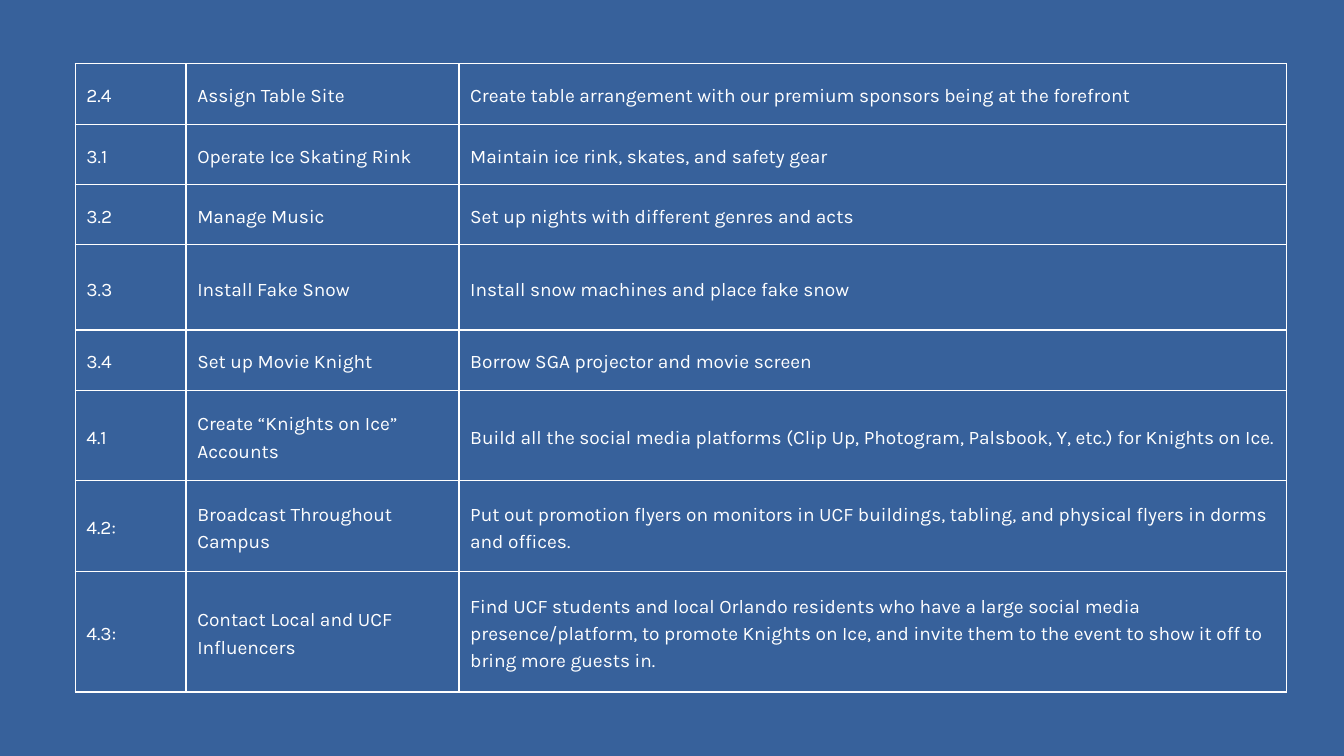
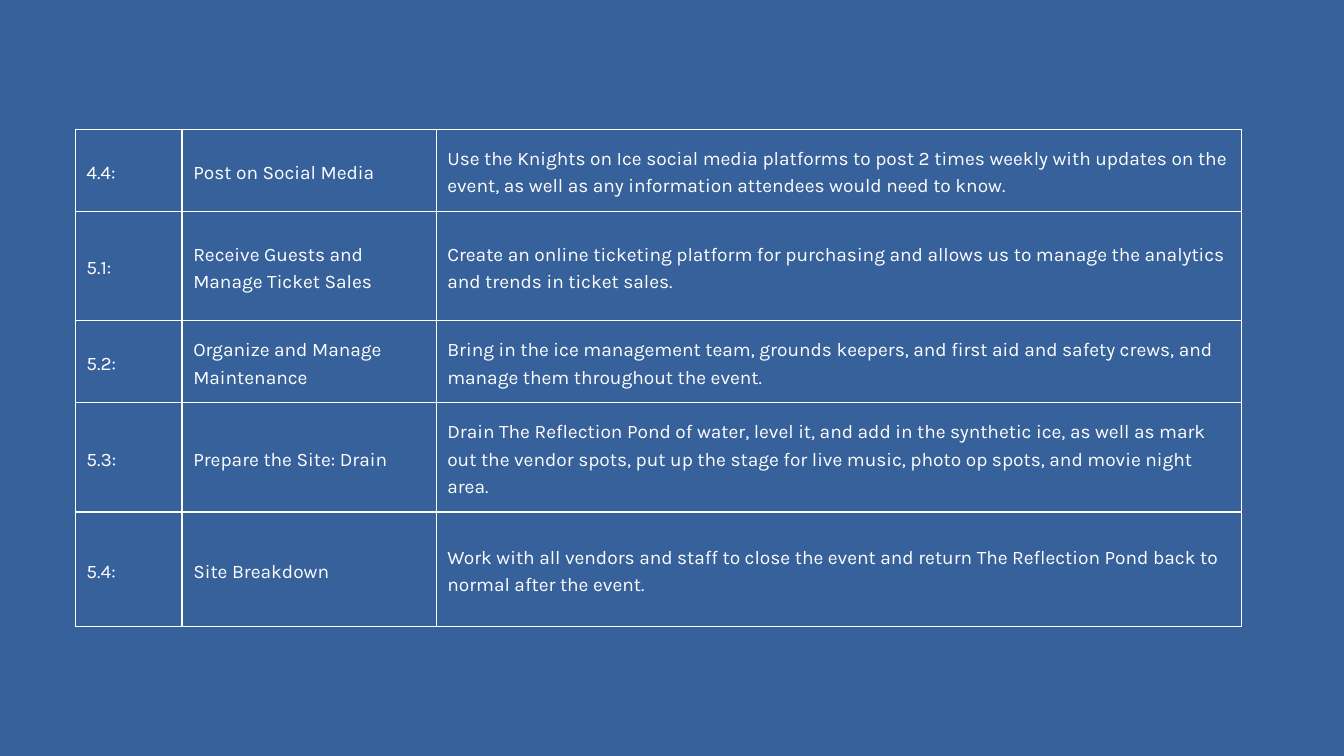
import pptx
import pptx.dml.color
import pptx.enum.text
import pptx.oxml.ns
import pptx.util
from lxml import etree

Pt = pptx.util.Pt
BLUE = "37619B"
WHITE = "FFFFFF"
FONT = "Karla"
LEFT = 80.6
INSET = Pt(12)


def rgb(value):
    return pptx.dml.color.RGBColor.from_string(value)


def add_borders(cell, color, width):
    """Line all four sides; call before the fill, which must follow in the XML."""
    tc_pr = cell._tc.get_or_add_tcPr()
    for side in ("lnL", "lnR", "lnT", "lnB"):
        ln = etree.SubElement(tc_pr, pptx.oxml.ns.qn("a:" + side), w=str(Pt(width)))
        fill = etree.SubElement(ln, pptx.oxml.ns.qn("a:solidFill"))
        etree.SubElement(fill, pptx.oxml.ns.qn("a:srgbClr"), val=color)


# Each slide: table top, column widths, then rows of (height, number, task, description)
task_slides = [
    (68.4, (118.8, 292.4, 887), [
        (64.6, "2.4", "Assign Table Site",
         "Create table arrangement with our premium sponsors being at the forefront"),
        (64.6, "3.1", "Operate Ice Skating Rink",
         "Maintain ice rink, skates, and safety gear"),
        (64.6, "3.2", "Manage Music",
         "Set up nights with different genres and acts"),
        (91.4, "3.3", "Install Fake Snow",
         "Install snow machines and place fake snow"),
        (64.6, "3.4", "Set up Movie Knight",
         "Borrow SGA projector and movie screen"),
        (97, "4.1", "Create “Knights on Ice” Accounts",
         "Build all the social media platforms (Clip Up, Photogram, Palsbook, Y, etc.) "
         "for Knights on Ice."),
        (97, "4.2:", "Broadcast Throughout Campus",
         "Put out promotion flyers on monitors in UCF buildings, tabling, and physical "
         "flyers in dorms and offices."),
        (129.3, "4.3:", "Contact Local and UCF Influencers",
         "Find UCF students and local Orlando residents who have a large social media "
         "presence/platform, to promote Knights on Ice, and invite them to the event to "
         "show it off to bring more guests in."),
    ]),
    (138.6, (114.5, 272.2, 863.2), [
        (87.8, "4.4:", "Post on Social Media",
         "Use the Knights on Ice social media platforms to post 2 times weekly with "
         "updates on the event, as well as any information attendees would need to know."),
        (117, "5.1:", "Receive Guests and Manage Ticket Sales",
         "Create an online ticketing platform for purchasing and allows us to manage the "
         "analytics and trends in ticket sales."),
        (87.8, "5.2:", "Organize and Manage Maintenance",
         "Bring in the ice management team, grounds keepers, and first aid and safety "
         "crews, and manage them throughout the event."),
        (117.4, "5.3:", "Prepare the Site: Drain",
         "Drain The Reflection Pond of water, level it, and add in the synthetic ice, as "
         "well as mark out the vendor spots, put up the stage for live music, photo op "
         "spots, and movie night area."),
        (122.6, "5.4:", "Site Breakdown",
         "Work with all vendors and staff to close the event and return The Reflection "
         "Pond back to normal after the event."),
    ]),
]

prs = pptx.Presentation()
prs.slide_width = Pt(1440)
prs.slide_height = Pt(810)

for top, widths, tasks in task_slides:
    s = prs.slides.add_slide(prs.slide_layouts[6])
    s.background.fill.solid()
    s.background.fill.fore_color.rgb = rgb(BLUE)

    height = sum(task[0] for task in tasks)
    table = s.shapes.add_table(len(tasks), len(widths), Pt(LEFT), Pt(top),
                               Pt(sum(widths)), Pt(height)).table
    table.first_row = False
    table.horz_banding = False
    for column, width in zip(table.columns, widths):
        column.width = Pt(width)

    for row, (row_height, *texts) in zip(table.rows, tasks):
        row.height = Pt(row_height)
        for cell, text in zip(row.cells, texts):
            add_borders(cell, WHITE, 1.5)
            cell.fill.background()
            cell.margin_left = cell.margin_right = INSET
            cell.margin_top = cell.margin_bottom = INSET
            cell.vertical_anchor = pptx.enum.text.MSO_ANCHOR.MIDDLE
            p = cell.text_frame.paragraphs[0]
            p.text = text
            p.line_spacing = Pt(29.4)
            r = p.runs[0]
            r.font.name = FONT
            r.font.size = Pt(20.5)
            r.font.color.rgb = rgb(WHITE)

prs.save("out.pptx")
